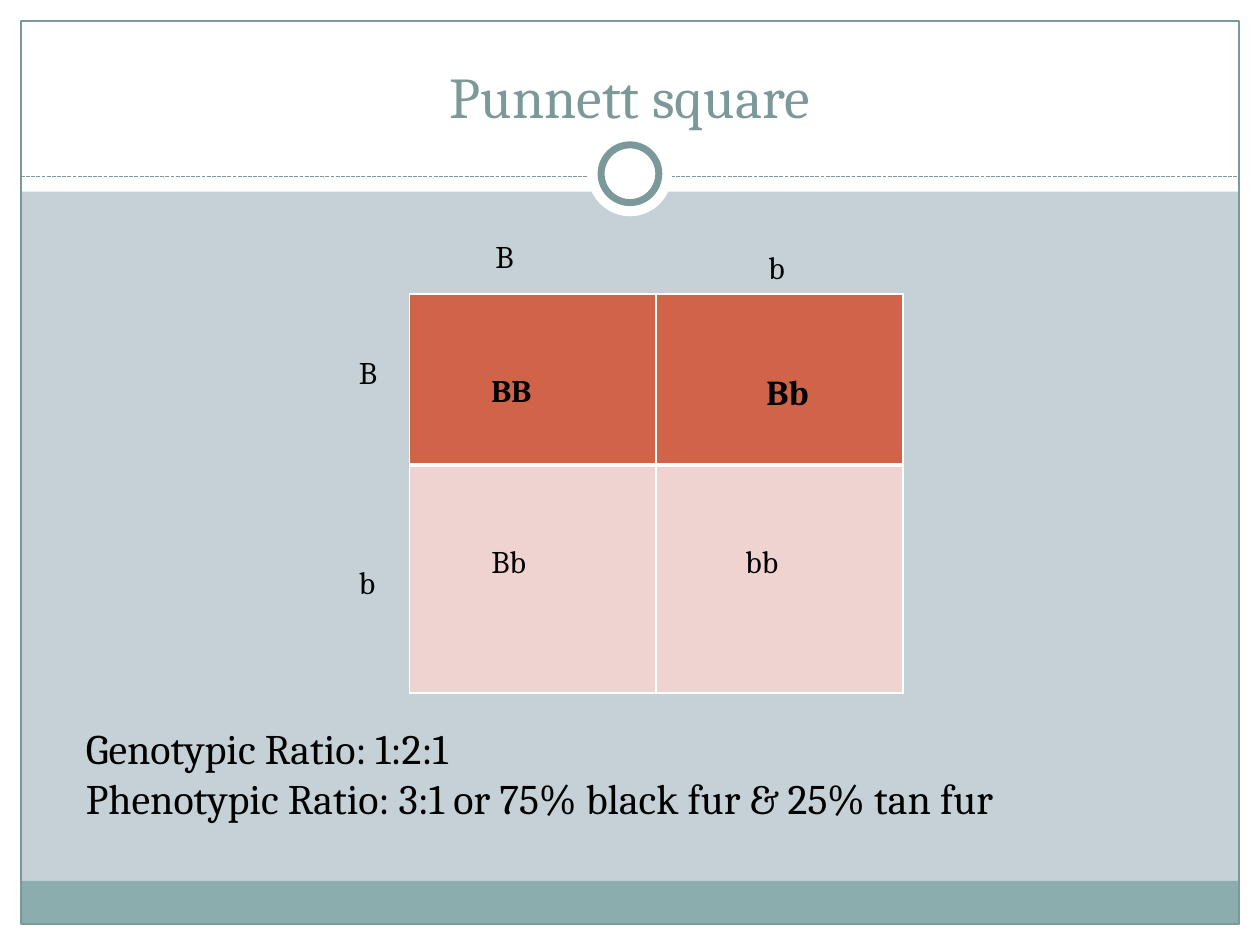
from dataclasses import dataclass

from lxml.etree import SubElement
from pptx import Presentation
from pptx.dml.color import RGBColor as RGB
from pptx.enum.dml import MSO_LINE
from pptx.enum.shapes import MSO_CONNECTOR, MSO_SHAPE
from pptx.enum.text import MSO_ANCHOR as Anchor, MSO_AUTO_SIZE as AutoSize, PP_ALIGN as Align
from pptx.oxml.ns import qn
from pptx.util import Inches, Pt


@dataclass(frozen=True)
class Theme:
    font: str = "Cambria"
    background: str = "C5D1D7"
    paper: str = "FFFFFF"
    accent: str = "7C999A"
    footer: str = "8CADAE"
    dominant: str = "D16349"
    recessive: str = "EED3D0"
    ink: str = "000000"
    title_size: float = 33
    body_size: float = 24
    label_size: float = 18
    large_label_size: float = 20


COLUMNS, ROWS = 120, 90
UNIT = Inches(10) / COLUMNS


def grid(*lengths):
    return [round(length * UNIT) for length in lengths]


class SlideBuilder:
    def __init__(self, deck, theme):
        self.theme = theme
        self.page = deck.slides.add_slide(deck.slide_layouts[5])
        fill = self.page.background.fill
        fill.solid()
        fill.fore_color.rgb = RGB.from_string(theme.background)

    def style(self, para, size, color=None, bold=False):
        para.font.name = self.theme.font
        para.font.size = Pt(size)
        para.font.bold = bold
        para.font.color.rgb = RGB.from_string(color or self.theme.ink)

    def shape(self, kind, area, fill=None, line=None, width=0.75):
        shape = self.page.shapes.add_shape(kind, *grid(*area))
        shape.shadow.inherit = False
        if fill:
            shape.fill.solid()
            shape.fill.fore_color.rgb = RGB.from_string(fill)
        else:
            shape.fill.background()
        if line:
            shape.line.color.rgb = RGB.from_string(line)
            shape.line.width = Pt(width)
        else:
            shape.line.fill.background()

    def dashed_line(self, start, end):
        line = self.page.shapes.add_connector(MSO_CONNECTOR.STRAIGHT, *grid(*start, *end))
        line.line.color.rgb = RGB.from_string(self.theme.accent)
        line.line.width = Pt(0.75)
        line.line.dash_style = MSO_LINE.SQUARE_DOT
        SubElement(line._element.spPr, qn("a:effectLst"))

    def title(self, text, area):
        """Fill the title placeholder and bring it in front of the frame."""
        title = self.page.shapes.title
        title.left, title.top, title.width, title.height = grid(*area)
        frame = title.text_frame
        frame.text = text
        frame.vertical_anchor = Anchor.BOTTOM
        frame.auto_size = AutoSize.NONE
        frame.paragraphs[0].alignment = Align.CENTER
        self.style(frame.paragraphs[0], self.theme.title_size, self.theme.accent)
        title._element.getparent().append(title._element)

    def text(self, lines, area, size):
        frame = self.page.shapes.add_textbox(*grid(*area)).text_frame
        frame.word_wrap = True
        frame.auto_size = AutoSize.SHAPE_TO_FIT_TEXT
        frame.text = "\n".join(lines)
        for para in frame.paragraphs:
            self.style(para, size)

    def border(self, cell, **widths):
        """Set the cell borders; sides are named L, R, T and B, widths are points."""
        props = cell._tc.get_or_add_tcPr()
        for index, side in enumerate("LRTB"):
            line = props.makeelement(qn(f"a:ln{side}"), {"w": str(Pt(widths[side]))})
            fill = SubElement(line, qn("a:solidFill"))
            SubElement(fill, qn("a:srgbClr"), val=self.theme.paper)
            props.insert(index, line)

    def punnett_table(self, origin, column_width, row_heights, genotypes):
        """Each genotype is its text, left inset and type size."""
        theme = self.theme
        size = (column_width * 2, sum(row_heights))
        table = self.page.shapes.add_table(2, 2, *grid(*origin, *size)).table
        for column in table.columns:
            column.width = grid(column_width)[0]
        for r, entries in enumerate(genotypes):
            table.rows[r].height = grid(row_heights[r])[0]
            for c, (text, inset, text_size) in enumerate(entries):
                cell = table.cell(r, c)
                cell.fill.solid()
                color = theme.recessive if r else theme.dominant
                cell.fill.fore_color.rgb = RGB.from_string(color)
                cell.margin_left, cell.margin_top = grid(inset, 7.6)
                cell.text = text
                self.style(cell.text_frame.paragraphs[0], text_size, bold=r == 0)
                self.border(cell, L=1, R=1, T=3 if r else 1, B=1 if r else 3)


def main():
    theme = Theme()
    deck = Presentation()
    deck.slide_width, deck.slide_height = grid(COLUMNS, ROWS)
    slide = SlideBuilder(deck, theme)

    edge = 2
    inner_width, inner_height = COLUMNS - 2 * edge, ROWS - 2 * edge
    for margin in (
        (0, ROWS - edge, COLUMNS, edge),
        (0, 0, COLUMNS, 18.25),
        (0, 0, edge, ROWS),
        (COLUMNS - edge, 0, edge, ROWS),
    ):
        slide.shape(MSO_SHAPE.RECTANGLE, margin, theme.paper)
    slide.shape(MSO_SHAPE.RECTANGLE, (edge, 83.9, inner_width, 4.1), theme.footer)
    slide.shape(MSO_SHAPE.RECTANGLE, (edge, edge, inner_width, inner_height), line=theme.accent)
    slide.dashed_line((edge, 16.8), (COLUMNS - edge, 16.8))
    slide.shape(MSO_SHAPE.OVAL, (56, 12.6, 8, 8), theme.paper)
    slide.shape(MSO_SHAPE.OVAL, (57.25, 13.8, 5.5, 5.5), theme.paper, theme.accent, 4)

    slide.title("Punnett square", (4, 3, 112, 10))
    small, large = theme.label_size, theme.large_label_size
    slide.punnett_table(
        (39, 28), 23.5, (16.3, 21.7),
        [
            [("BB", 7.8, small), ("Bb", 10.5, large)],
            [("Bb", 7.8, small), ("bb", 8.5, small)],
        ],
    )
    for allele, left, top in (("B", 46, 22), ("B", 33, 33), ("b", 72, 23), ("b", 33, 53)):
        slide.text([allele], (left, top, 5, 5), small)
    slide.text(
        ["Genotypic Ratio: 1:2:1", "Phenotypic Ratio: 3:1 or 75% black fur & 25% tan fur"],
        (7, 68.2, 103, 10.9), theme.body_size,
    )
    deck.save("out.pptx")


if __name__ == "__main__":
    main()
